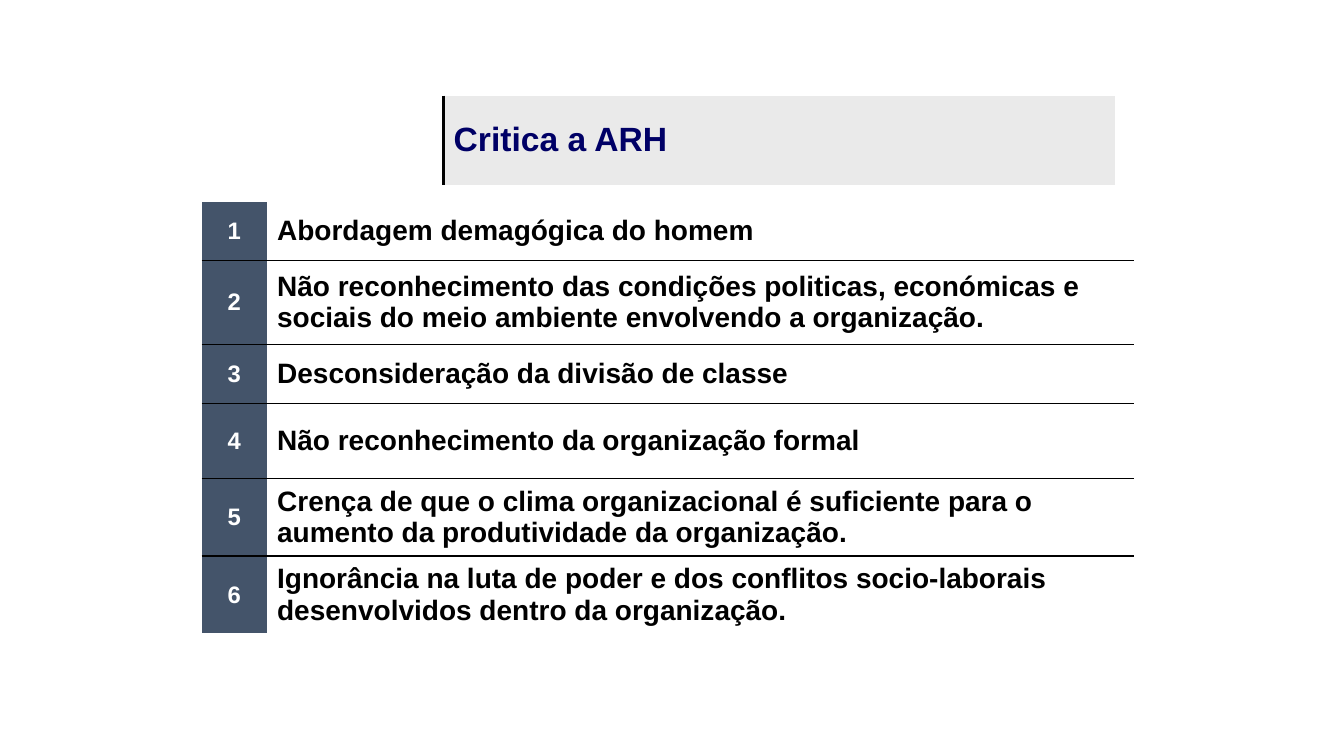
from dataclasses import dataclass

from lxml.etree import SubElement
from pptx import Presentation
from pptx.dml.color import RGBColor
from pptx.enum.text import MSO_ANCHOR as Anchor, PP_ALIGN as Align
from pptx.oxml.ns import qn
from pptx.util import Cm, Pt


@dataclass(frozen=True)
class Theme:
    font: str = "Arial"
    heading: str = "000066"
    band: str = "EAEAEA"
    number_fill: str = "44546A"
    light: str = "FFFFFF"
    dark: str = "000000"
    heading_size: int = 24
    number_size: int = 17
    point_size: int = 20
    plain_table: str = "{2D5ABB26-0587-4C30-8999-92F81FD0307C}"


theme = Theme()


def add_plain_table(left, top, widths, heights):
    """Add an unstyled table; all lengths are in centimetres."""
    frame = slide.shapes.add_table(
        len(heights), len(widths), Cm(left), Cm(top), Cm(sum(widths)), Cm(sum(heights)))
    frame.element.xpath(".//a:tableStyleId")[0].text = theme.plain_table
    table = frame.table
    table.first_row = table.horz_banding = False
    for column, width in zip(table.columns, widths):
        column.width = Cm(width)
    for row, height in zip(table.rows, heights):
        row.height = Cm(height)
    return table


def fill_cell(cell, text, size, color, fill=None, align=Align.LEFT, borders=()):
    """Write one cell; borders are (tag, points) in the order left, top, bottom."""
    cell.text = text
    cell.vertical_anchor = Anchor.MIDDLE
    paragraph = cell.text_frame.paragraphs[0]
    paragraph.alignment = align
    paragraph.font.name = theme.font
    paragraph.font.size = Pt(size)
    paragraph.font.bold = True
    paragraph.font.color.rgb = RGBColor.from_string(color)
    properties = cell._tc.get_or_add_tcPr()
    for tag, points in borders:
        line = SubElement(properties, qn(tag), w=str(Pt(points)))
        solid = SubElement(line, qn("a:solidFill"))
        SubElement(solid, qn("a:srgbClr"), val=theme.dark)
    if fill:
        cell.fill.solid()
        cell.fill.fore_color.rgb = RGBColor.from_string(fill)
    else:
        cell.fill.background()


prs = Presentation()
prs.slide_width, prs.slide_height = Cm(33.87), Cm(19.05)
slide = prs.slides.add_slide(prs.slide_layouts[6])

# Heading band
heading = add_plain_table(11.18, 2.41, [16.92], [2.24])
fill_cell(heading.cell(0, 0), "Critica a ARH", theme.heading_size, theme.heading,
          theme.band, borders=[("a:lnL", 2.25)])

# Numbered criticisms, with their row heights
criticisms = [
    ("Abordagem demagógica do homem", 1.48),
    ("Não reconhecimento das condições politicas, económicas e sociais "
     "do meio ambiente envolvendo a organização.", 2.12),
    ("Desconsideração da divisão de classe", 1.48),
    ("Não reconhecimento da organização formal", 1.9),
    ("Crença de que o clima organizacional é suficiente para o aumento "
     "da produtividade da organização.", 1.95),
    ("Ignorância na luta de poder e dos conflitos socio-laborais "
     "desenvolvidos dentro da organização.", 1.95),
]
criticism_table = add_plain_table(
    5.08, 5.08, [1.65, 21.84], [height for _, height in criticisms])

for index, (criticism, _) in enumerate(criticisms):
    # Rules run only between the rows
    rules = []
    if index > 0:
        rules.append(("a:lnT", 1))
    if index < len(criticisms) - 1:
        rules.append(("a:lnB", 1))
    fill_cell(criticism_table.cell(index, 0), str(index + 1), theme.number_size,
              theme.light, theme.number_fill, Align.CENTER, rules)
    fill_cell(criticism_table.cell(index, 1), criticism, theme.point_size,
              theme.dark, borders=rules)

prs.save("out.pptx")
